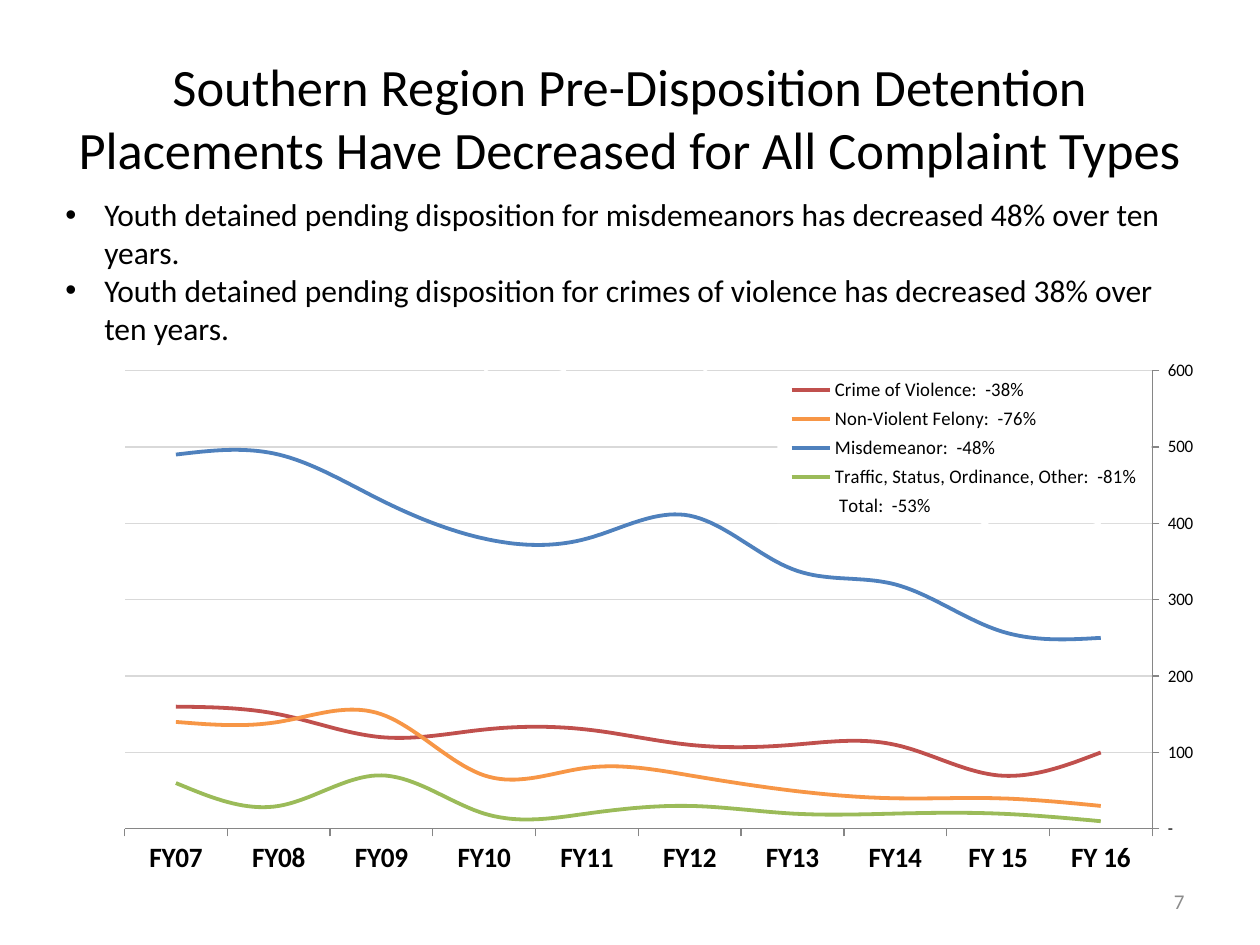
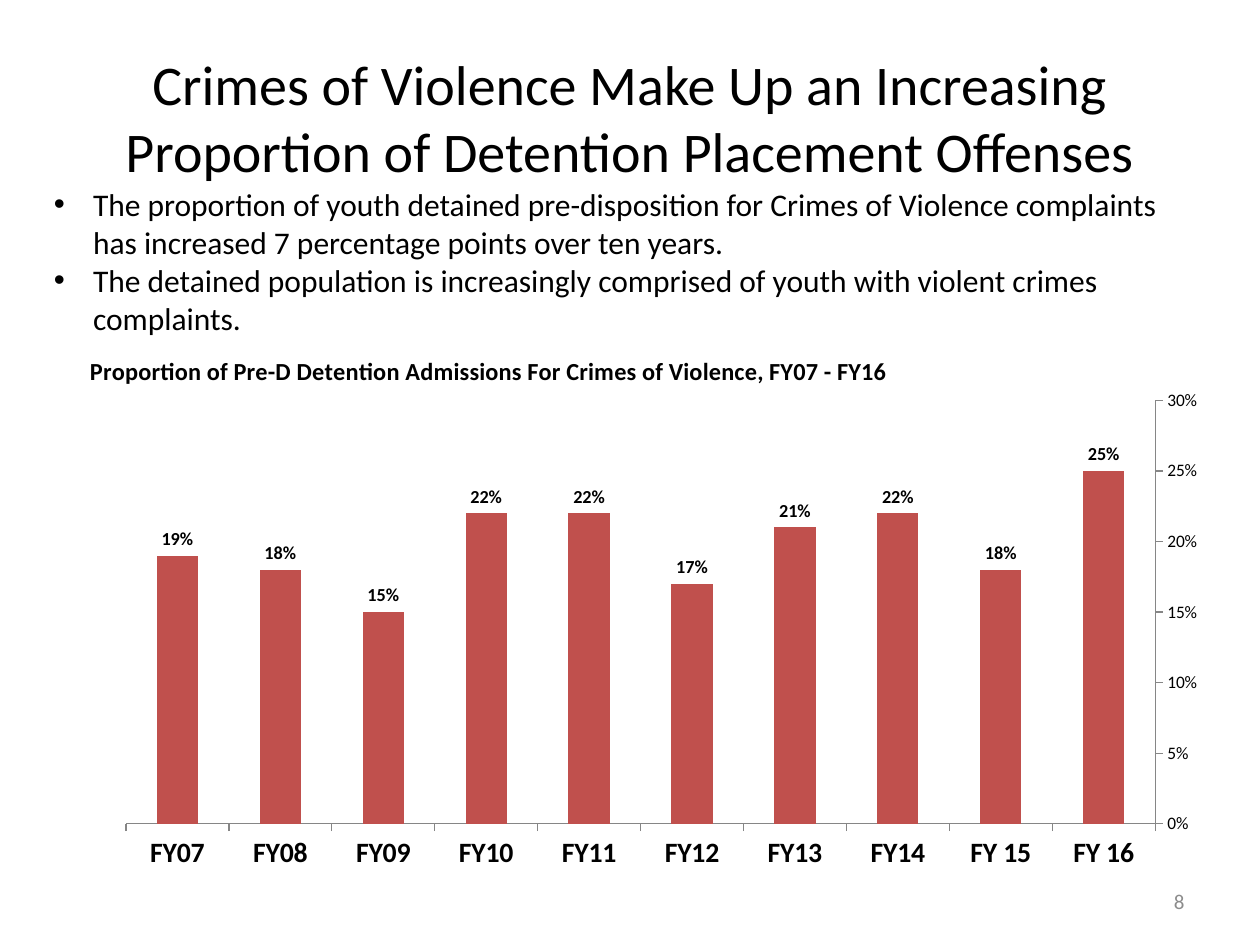
import dataclasses

import pptx
import pptx.chart.data
import pptx.dml.color
import pptx.enum.chart
import pptx.enum.text
import pptx.oxml
import pptx.oxml.ns
import pptx.util

PX = 9144


@dataclasses.dataclass(frozen=True)
class Theme:
    font: str = "Calibri"
    text: str = "000000"
    number: str = "8C8C8C"
    axis: str = "868686"
    grid: str = "D9D9D9"
    red: str = "C0504D"
    orange: str = "F79646"
    blue: str = "4F81BD"
    green: str = "9BBB59"
    white: str = "FFFFFF"
    body_size: float = 18
    number_size: float = 12
    category_size: float = 16
    value_size: float = 10
    legend_size: float = 11
    chart_title_size: float = 14
    label_size: float = 10.5


theme = Theme()
rgb = pptx.dml.color.RGBColor.from_string
Align = pptx.enum.text.PP_ALIGN
Anchor = pptx.enum.text.MSO_ANCHOR
ChartType = pptx.enum.chart.XL_CHART_TYPE


def style_font(font, size, color=theme.text, bold=False):
    font.name = theme.font
    font.size = pptx.util.Pt(size)
    font.bold = bold
    font.color.rgb = rgb(color)


def set_layout(parent, index, inner=False, **place):
    for old in parent.findall(pptx.oxml.ns.qn("c:layout")):
        parent.remove(old)
    parts = [("layoutTarget", "inner")] if inner else []
    parts += [("xMode", "edge"), ("yMode", "edge"), *place.items()]
    body = "".join(f'<c:{tag} val="{value}"/>' for tag, value in parts)
    parent.insert(index, pptx.oxml.parse_xml(
        f'<c:layout {pptx.oxml.ns.nsdecls("c")}>'
        f"<c:manualLayout>{body}</c:manualLayout></c:layout>"))


years = ["FY 16", "FY 15", "FY14", "FY13", "FY12",
         "FY11", "FY10", "FY09", "FY08", "FY07"]
slides = [
    dict(
        title="Southern Region Pre-Disposition Detention Placements "
              "Have Decreased for All Complaint Types",
        title_size=30,
        number="7",
        bullets=[
            "Youth detained pending disposition for misdemeanors has "
            "decreased 48% over ten years.",
            "Youth detained pending disposition for crimes of violence has "
            "decreased 38% over ten years.",
        ],
        bullets_at=(42, 150, 917, 131),
        chart_type=ChartType.LINE,
        chart_at=(50, 275, 900, 425),
        plot=dict(x=0.056, y=0.045, w=0.935, h=0.856),
        axis_format='_(* #,##0_);_(* \\(#,##0\\);_(* "-"??_);_(',
        axis_max=600,
        axis_step=100,
        series=[
            ("Crime of Violence:  -38%", theme.red,
             [100, 70, 110, 110, 110, 130, 130, 120, 150, 160]),
            ("Non-Violent Felony:  -76%", theme.orange,
             [30, 40, 40, 50, 70, 80, 70, 150, 140, 140]),
            ("Misdemeanor:  -48%", theme.blue,
             [250, 260, 320, 340, 410, 380, 380, 430, 490, 490]),
            ("Traffic, Status, Ordinance, Other:  -81%", theme.green,
             [10, 20, 20, 20, 30, 20, 20, 70, 30, 60]),
            (" Total:  -53%", theme.white,
             [400, 390, 490, 520, 610, 610, 600, 760, 820, 850]),
        ],
    ),
    dict(
        title="Crimes of Violence Make Up an Increasing Proportion of "
              "Detention Placement Offenses",
        title_size=32,
        number="8",
        bullets=[
            "The proportion of youth detained pre-disposition for Crimes of "
            "Violence complaints has increased 7 percentage points over "
            "ten years.",
            "The detained population is increasingly comprised of youth with "
            "violent crimes complaints.",
        ],
        bullets_at=(33, 142, 925, 131),
        chart_type=ChartType.COLUMN_CLUSTERED,
        chart_at=(50, 273, 900, 427),
        plot=dict(x=0.056, y=0.105, w=0.915, h=0.787),
        axis_format="0%",
        axis_max=0.3,
        axis_step=0.05,
        series=[
            ("Series 1", theme.red,
             [0.25, 0.18, 0.22, 0.21, 0.17, 0.22, 0.22, 0.15, 0.18, 0.19]),
        ],
    ),
]

prs = pptx.Presentation()
prs.slide_width = 1000 * PX
prs.slide_height = 750 * PX

for page in slides:
    s = prs.slides.add_slide(prs.slide_layouts[6])

    data = pptx.chart.data.CategoryChartData()
    data.categories = years
    for name, color, values in page["series"]:
        data.add_series(name, values)
    chart = s.shapes.add_chart(
        page["chart_type"], *[n * PX for n in page["chart_at"]], data).chart
    style_font(chart.font, theme.value_size)
    chart.has_title = False
    chart.has_legend = False
    set_layout(chart._chartSpace.chart.plotArea, 0, inner=True, **page["plot"])

    cat, val = chart.category_axis, chart.value_axis
    cat.reverse_order = True
    cat.crosses = pptx.enum.chart.XL_AXIS_CROSSES.MAXIMUM
    style_font(cat.tick_labels.font, theme.category_size, bold=True)
    style_font(val.tick_labels.font, theme.value_size)
    val.minimum_scale = 0
    val.maximum_scale = page["axis_max"]
    val.major_unit = page["axis_step"]
    val.tick_labels.number_format = page["axis_format"]
    val.tick_labels.number_format_is_linked = False
    val.has_major_gridlines = False
    for axis in (cat, val):
        axis.major_tick_mark = pptx.enum.chart.XL_TICK_MARK.OUTSIDE
        axis.format.line.color.rgb = rgb(theme.axis)
        axis.format.line.width = pptx.util.Pt(0.75)

    plot = chart.plots[0]
    plot.vary_by_categories = False
    if page["chart_type"] == ChartType.LINE:
        grid = val.major_gridlines.format.line
        grid.color.rgb = rgb(theme.grid)
        grid.width = pptx.util.Pt(0.75)
        for series, (name, color, values) in zip(plot.series, page["series"]):
            series.smooth = True
            series.marker.style = pptx.enum.chart.XL_MARKER_STYLE.NONE
            series.format.line.color.rgb = rgb(color)
            series.format.line.width = pptx.util.Pt(2.25)
        chart.has_legend = True
        legend = chart.legend
        legend.position = pptx.enum.chart.XL_LEGEND_POSITION.RIGHT
        legend.include_in_layout = False
        style_font(legend.font, theme.legend_size)
        set_layout(legend._element, 1, x=0.65, y=0.05, w=0.34, h=0.28)
        legend._element.find(pptx.oxml.ns.qn("c:txPr")).addprevious(
            pptx.oxml.parse_xml(
                f'<c:spPr {pptx.oxml.ns.nsdecls("c", "a")}><a:solidFill>'
                f'<a:srgbClr val="{theme.white}"/></a:solidFill></c:spPr>'))
    else:
        plot.gap_width = 150
        for series, (name, color, values) in zip(plot.series, page["series"]):
            series.format.fill.solid()
            series.format.fill.fore_color.rgb = rgb(color)
        plot.has_data_labels = True
        labels = plot.data_labels
        labels.show_value = True
        labels.position = pptx.enum.chart.XL_LABEL_POSITION.OUTSIDE_END
        labels.number_format = "0%"
        labels.number_format_is_linked = False
        style_font(labels.font, theme.label_size, bold=True)
        chart.has_title = True
        r = chart.chart_title.text_frame.paragraphs[0].add_run()
        r.text = ("Proportion of Pre-D Detention Admissions "
                  "For Crimes of Violence, FY07 - FY16")
        style_font(r.font, theme.chart_title_size, bold=True)
        title = chart.chart_title._element
        set_layout(title, 1, x=0.02, y=0.01)
        title.find(pptx.oxml.ns.qn("c:overlay")).set("val", "1")

    texts = [
        ((50, 30, 900, 125), [page["title"]], page["title_size"],
         theme.text, Align.CENTER, Anchor.MIDDLE),
        ((717, 695, 233, 40), [page["number"]], theme.number_size,
         theme.number, Align.RIGHT, Anchor.MIDDLE),
        (page["bullets_at"], page["bullets"], theme.body_size,
         theme.text, Align.LEFT, Anchor.TOP),
    ]
    for at, lines, size, color, align, anchor in texts:
        sp = s.shapes.add_textbox(*[n * PX for n in at])
        tf = sp.text_frame
        tf.word_wrap = True
        tf.vertical_anchor = anchor
        for i, line in enumerate(lines):
            p = tf.add_paragraph() if i else tf.paragraphs[0]
            p.alignment = align
            r = p.add_run()
            r.text = line
            style_font(r.font, size, color)
            if lines is page["bullets"]:
                pPr = p._p.get_or_add_pPr()
                pPr.set("marL", str(31 * PX))
                pPr.set("indent", str(-31 * PX))
                for xml in ('a:buFont {} typeface="Arial"', 'a:buChar {} char="•"'):
                    pPr.append(pptx.oxml.parse_xml(
                        "<" + xml.format(pptx.oxml.ns.nsdecls("a")) + "/>"))

prs.save("out.pptx")
